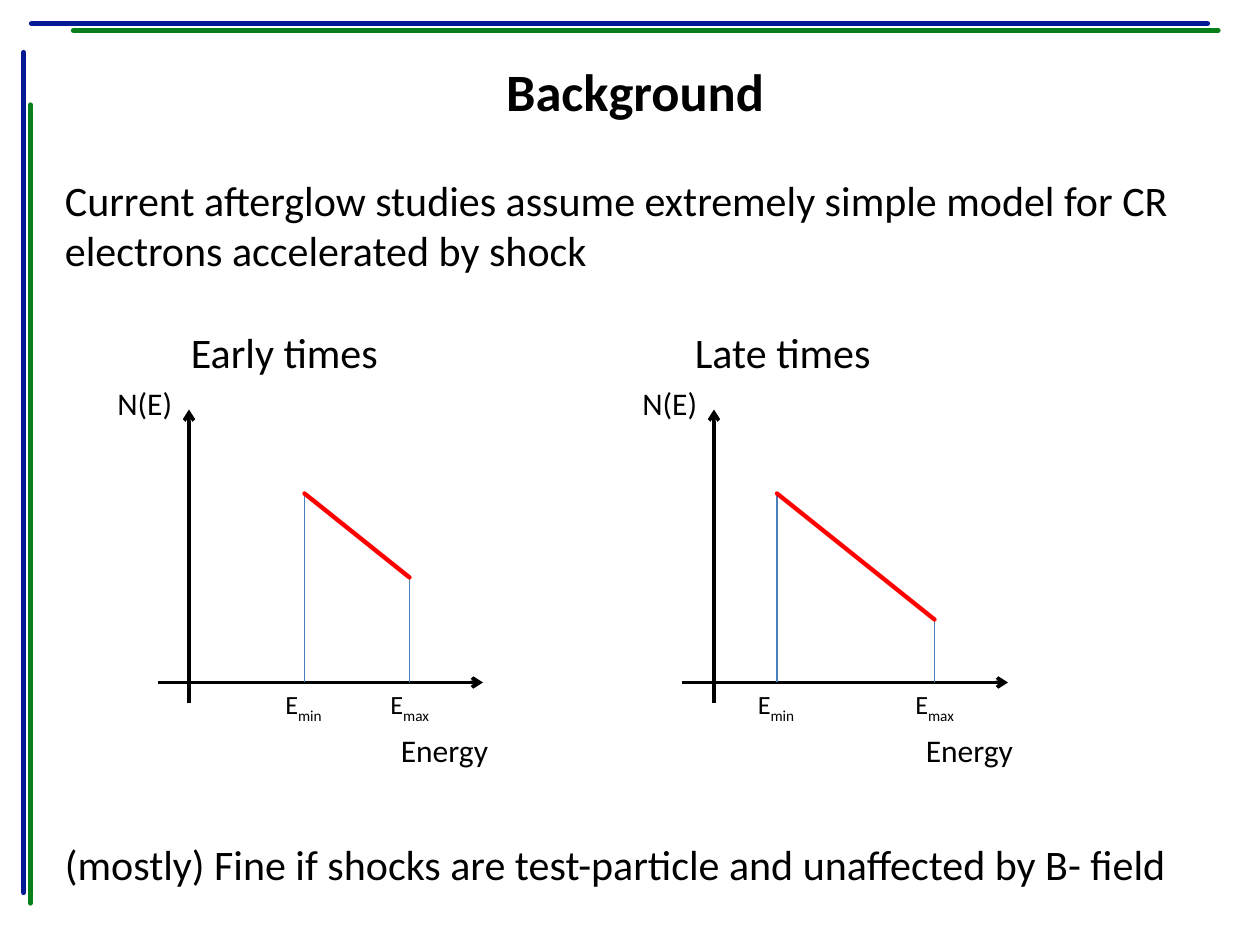
from lxml.etree import SubElement
from pptx import Presentation
from pptx.dml.color import RGBColor
from pptx.enum.shapes import MSO_CONNECTOR as Connector
from pptx.enum.text import MSO_ANCHOR as Anchor, MSO_AUTO_SIZE as AutoSize, PP_ALIGN as Align
from pptx.oxml.ns import qn
from pptx.util import Inches, Pt

COLORS = {"blue": "061995", "green": "088019", "black": "000000",
          "guide": "4B7EBC", "red": "FF0000"}
FONT = "Calibri"

deck = Presentation()
deck.slide_width, deck.slide_height = Inches(10), Inches(7.5)
page = deck.slides.add_slide(deck.slide_layouts[5])
UNIT = deck.slide_width / 120  # grid of 120 columns by 90 rows


def add_line(start, end, color, width, cap="flat", arrow=False):
    """Draw a line between two (column, row) points."""
    ends = [round(value * UNIT) for value in (*start, *end)]
    line = page.shapes.add_connector(Connector.STRAIGHT, *ends)
    line.line.color.rgb = RGBColor.from_string(COLORS[color])
    line.line.width = Pt(width)
    outline = line.line._get_or_add_ln()
    outline.set("cap", cap)
    if arrow:
        SubElement(outline, qn("a:tailEnd"), type="arrow")
    SubElement(line._element.spPr, qn("a:effectLst"))


def add_label(column, row, width, height, size, text, subscript=""):
    """Write one line of text with an optional subscript."""
    box = page.shapes.add_textbox(*(round(value * UNIT) for value in (column, row, width, height)))
    box.text_frame.word_wrap = True
    para = box.text_frame.paragraphs[0]
    para.font.size, para.font.name = Pt(size), FONT
    para.font.color.rgb = RGBColor.from_string(COLORS["black"])
    para.add_run().text = text
    if subscript:
        span = para.add_run()
        span.text = subscript
        span.font._element.set("baseline", "-25000")


# Frame lines along the top and left edges
for start, end, color in [
    ((2.25, 5), (2.25, 85), "blue"),
    ((3, 2.25), (115, 2.25), "blue"),
    ((116, 2.9), (7, 2.9), "green"),
    ((2.9, 10), (2.9, 86), "green"),
]:
    add_line(start, end, color, 3, cap="rnd")

# Title
title = page.shapes.title
title.left, title.top, title.width, title.height = (round(value * UNIT) for value in (22, 5, 77, 7.3))
title.text_frame.auto_size = AutoSize.NONE
title.text_frame.vertical_anchor = Anchor.MIDDLE
title.text_frame.text = "Background"
heading = title.text_frame.paragraphs[0]
heading.alignment = Align.CENTER
heading.font.size, heading.font.name, heading.font.bold = Pt(30), FONT, True
heading.font.color.rgb = RGBColor.from_string(COLORS["black"])

# Statements, with the graph headings on tab stops
body = page.shapes.add_textbox(*(round(value * UNIT) for value in (5, 16, 110, 69)))
body.text_frame.word_wrap = True
LINE_HEIGHT = 29.3
statements = [
    ("Current afterglow studies assume extremely simple model for CR electrons accelerated by shock", 0),
    ("\tEarly times\tLate times", 1),
    ("(mostly) Fine if shocks are test-particle and unaffected by B- field", 9),
]
for index, (text, gap_lines) in enumerate(statements):
    para = body.text_frame.paragraphs[0] if index == 0 else body.text_frame.add_paragraph()
    para.text = text
    if "\t" in text:
        tabs = SubElement(para._p.get_or_add_pPr(), qn("a:tabLst"))
        for stop in (12, 60):
            SubElement(tabs, qn("a:tab"), pos=str(round(stop * UNIT)), algn="l")
    para.space_before = Pt(gap_lines * LINE_HEIGHT)
    para.font.size, para.font.name = Pt(24), FONT
    para.font.color.rgb = RGBColor.from_string(COLORS["black"])

# Energy spectra: axis column, then column and top row of each energy limit
BASE = 65
for axis, low, high in [
    (18, (29, 47), (39, 55)),
    (68, (74, 47), (89, 59)),
]:
    add_line((axis, BASE + 2), (axis, 39), "black", 2, arrow=True)
    add_line((axis - 3, BASE), (axis + 28, BASE), "black", 2, arrow=True)
    add_label(axis - 8, 36, 8, 4.8, 18, "N(E)")
    add_label(axis + 19, 69, 13, 5, 18, "Energy")
    for (column, top), subscript in [(low, "min"), (high, "max")]:
        add_line((column, top), (column, BASE), "guide", 0.75)
        add_label(column - 3, BASE, 8, 4.2, 15, "E", subscript)
    add_line(low, high, "red", 2.5, cap="rnd")

deck.save("out.pptx")
